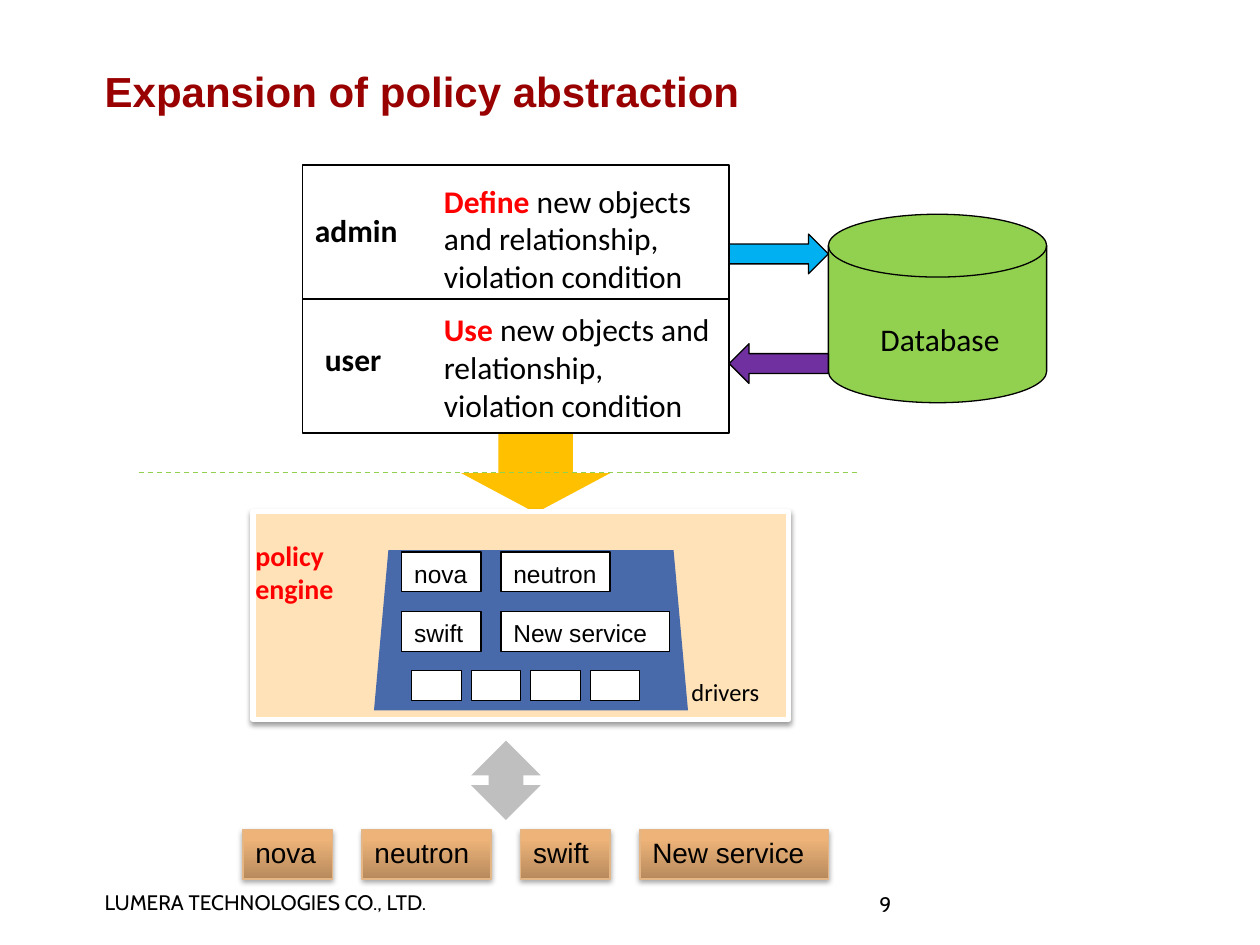
"""Build the slide on expanding the policy abstraction."""
from lxml import etree
from pptx import Presentation
from pptx.dml.color import RGBColor
from pptx.enum.dml import MSO_LINE
from pptx.enum.shapes import MSO_CONNECTOR, MSO_SHAPE as Preset
from pptx.enum.text import MSO_ANCHOR as Anchor, PP_ALIGN as Align
from pptx.oxml import parse_xml
from pptx.oxml.ns import nsdecls, qn
from pptx.util import Cm, Pt

BLACK, WHITE, RED = "000000", "FFFFFF", "FF0000"
TITLE = "Expansion of policy abstraction"
FOOTERS = [("LUMERA TECHNOLOGIES CO., LTD.", (2.11, 17.93, 7.06, 0.51)),
           ("9", (17.73, 17.98, 4.5, 0.6))]
ROLES = [("admin", 6.1, "Define", " new objects and relationship, violation condition"),
         ("user", 6.3, "Use", " new objects and relationship, violation condition")]
ROLE_TOP, ROLE_STEP = 3.53, 2.6
DRIVERS = [[("nova", 1.6), ("neutron", 2.2)], [("swift", 1.6), ("New service", 3.4)]]
SERVICES = [("nova", 1.8), ("neutron", 2.6), ("swift", 1.8), ("New service", 3.8)]
SERVICE_GAP = 0.6
DATA_ARROWS = [(Preset.RIGHT_ARROW, 4.72, "00B0F0"), (Preset.LEFT_ARROW, 6.93, "7030A0")]


def color(value):
    return RGBColor.from_string(value)


def write(shape, runs, size, font="Calibri", margins=(0.25, 0.13, 0.25, 0.13)):
    frame = shape.text_frame
    frame.word_wrap = True
    frame.vertical_anchor = Anchor.TOP
    (frame.margin_left, frame.margin_top,
     frame.margin_right, frame.margin_bottom) = map(Cm, margins)
    paragraph = frame.paragraphs[0]
    paragraph.alignment = Align.LEFT
    for text, value, bold in runs:
        run = paragraph.add_run()
        run.text = text
        run.font.name, run.font.size, run.font.bold = font, Pt(size), bold
        run.font.color.rgb = color(value)


def add_text(slide, box, runs, size, **options):
    shape = slide.shapes.add_textbox(*map(Cm, box))
    write(shape, runs, size, **options)


def add_block(slide, preset, box, fill=None, line=None, width=0.75):
    shape = slide.shapes.add_shape(preset, *map(Cm, box))
    shape.shadow.inherit = False
    if fill:
        shape.fill.solid()
        shape.fill.fore_color.rgb = color(fill)
    else:
        shape.fill.background()
    if line:
        shape.line.color.rgb = color(line)
        shape.line.width = Pt(width)
    else:
        shape.line.fill.background()
    return shape


def add_shadow(shape, opacity):
    effects = shape._element.spPr.find(qn("a:effectLst"))
    effects.append(parse_xml(
        f'<a:outerShdw {nsdecls("a")} blurRad="{Pt(3.1)}" dist="{Pt(1.7)}" dir="5400000" '
        f'rotWithShape="0"><a:srgbClr val="{BLACK}"><a:alpha val="{opacity * 1000}"/>'
        '</a:srgbClr></a:outerShdw>'))


def add_rule(slide, left, right, top, value):
    rule = slide.shapes.add_connector(
        MSO_CONNECTOR.STRAIGHT, Cm(left), Cm(top), Cm(right), Cm(top))
    rule.line.color.rgb = color(value)
    rule.line.width = Pt(0.75)
    etree.SubElement(rule._element.spPr, qn("a:effectLst"))
    return rule


def add_title(slide):
    title = slide.shapes.title
    title.left, title.top, title.width, title.height = map(Cm, (2.11, 0.91, 19.81, 1.83))
    write(title, [(TITLE, "990000", True)], 24, "Arial", (0, 0.1, 0.23, 0.1))
    title.text_frame.vertical_anchor = Anchor.MIDDLE


def add_engine(slide):
    add_block(slide, Preset.DOWN_ARROW, (9.3, 8.74, 3, 1.6), "FFC000")
    panel = add_block(slide, Preset.RECTANGLE, (5.1, 10.31, 10.8, 4.19), "FFE2B8", WHITE, 3)
    add_shadow(panel, 38)
    funnel = add_block(slide, Preset.TRAPEZOID, (7.54, 11.09, 6.33, 3.23), "486AAA")
    funnel.adjustments[0] = 0.09
    for row, drivers in enumerate(DRIVERS):
        for column, (name, width) in enumerate(drivers):
            box = (8.1 + 2 * column, 11.13 + 1.2 * row, width, 0.8)
            label = add_block(slide, Preset.RECTANGLE, box, WHITE, BLACK)
            write(label, [(name, BLACK, False)], 14, "Arial", (0.25, 0.13, 0, 0.13))
    for index in range(4):
        add_block(slide, Preset.RECTANGLE, (8.3 + 1.2 * index, 13.52, 1, 0.6), WHITE, BLACK)
    add_text(slide, (13.69, 13.51, 2.1, 0.86), [("drivers", BLACK, False)], 14)
    add_text(slide, (4.9, 10.72, 2.4, 1.63), [("policy engine", RED, True)], 16)


def add_services(slide):
    left = 4.9
    for name, width in SERVICES:
        box = (left, 16.72, width, 1)
        service = add_block(slide, Preset.RECTANGLE, box, WHITE, "E4B585")
        service.fill.gradient()
        service.fill.gradient_angle = 90
        stops = zip(service.fill.gradient_stops, [(0, "B78A5D"), (0.8, "EDB378")])
        for stop, (position, value) in stops:
            stop.position = position
            stop.color.rgb = color(value)
        add_shadow(service, 35)
        write(service, [(name, BLACK, False)], 16, "Arial", (0.25, 0.13, 0, 0.13))
        left += width + SERVICE_GAP
    add_block(slide, Preset.UP_DOWN_ARROW, (9.5, 14.93, 1.4, 1.6), "BFBFBF")


def add_roles(slide):
    add_block(slide, Preset.RECTANGLE, (6.1, 3.33, 8.6, 5.4), line=BLACK)
    add_rule(slide, 6.1, 14.7, 6.03, BLACK)
    for index, (role, left, action, rest) in enumerate(ROLES):
        top = ROLE_TOP + ROLE_STEP * index
        add_text(slide, (left, top + 0.6, 2.8, 1.02), [(role, BLACK, True)], 18)
        add_text(slide, (8.7, top, 6, 2.57), [(action, RED, True), (rest, BLACK, False)], 18)


def add_database(slide):
    add_block(slide, Preset.FLOWCHART_MAGNETIC_DISK, (16.7, 4.32, 4.4, 3.8), "92D050", BLACK)
    add_text(slide, (17.5, 6.32, 3.4, 1.02), [("Database", BLACK, False)], 18)
    for preset, top, fill in DATA_ARROWS:
        add_block(slide, preset, (14.7, top, 2, 0.8), fill, BLACK)


def main():
    presentation = Presentation()
    presentation.slide_width, presentation.slide_height = Cm(25.4), Cm(19.05)
    slide = presentation.slides.add_slide(presentation.slide_layouts[5])
    add_title(slide)
    for text, box in FOOTERS:
        add_text(slide, box, [(text, BLACK, False)], 12, font="Cabin", margins=(0, 0, 0, 0))
    add_engine(slide)
    add_services(slide)
    add_rule(slide, 2.8, 17.3, 9.52, "92D050").line.dash_style = MSO_LINE.DASH
    add_roles(slide)
    add_database(slide)
    presentation.save("out.pptx")


if __name__ == "__main__":
    main()
